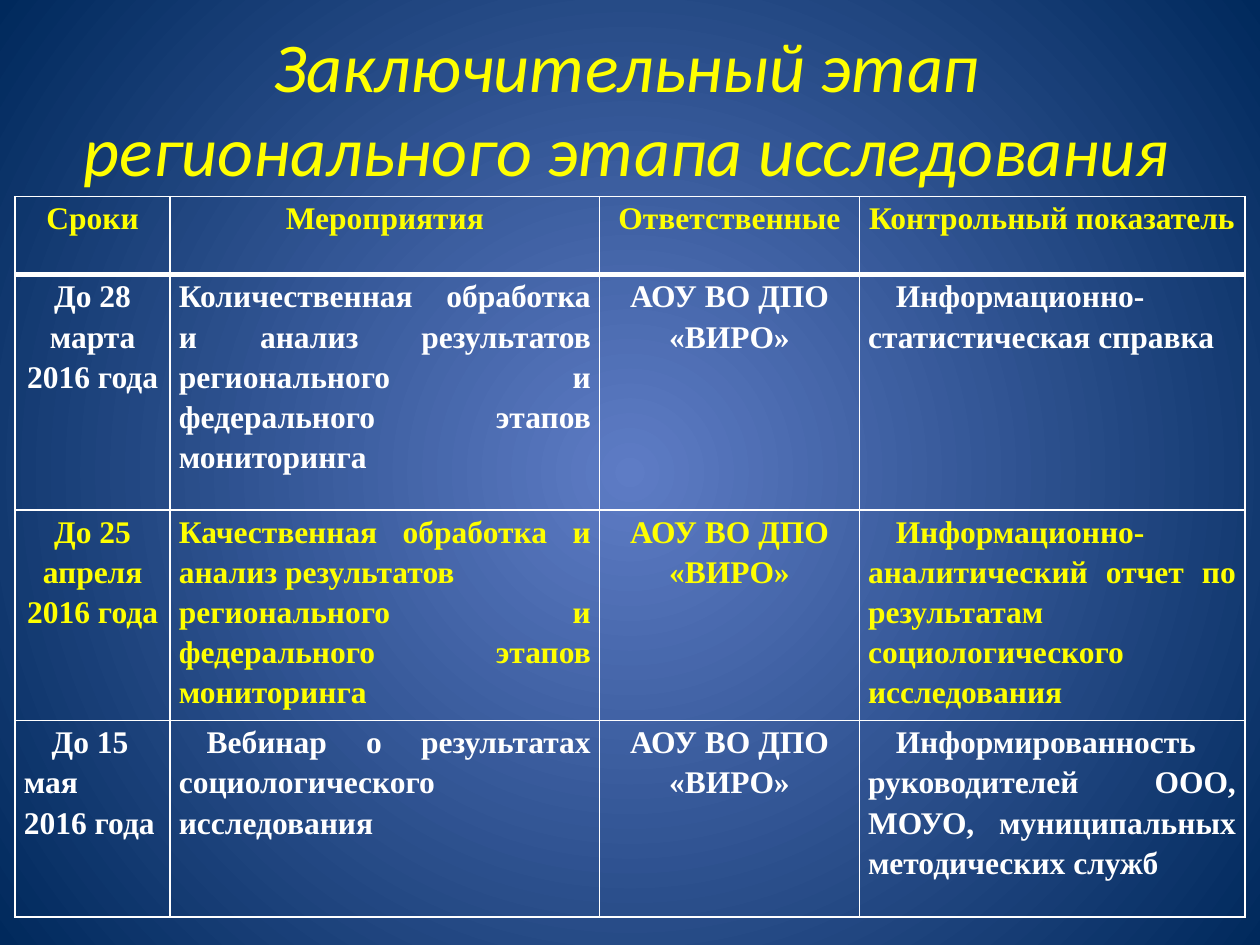
import pptx
import pptx.util
import pptx.dml.color
import pptx.enum.text
import pptx.oxml
import pptx.oxml.ns

Inches, Pt = pptx.util.Inches, pptx.util.Pt
Align = pptx.enum.text.PP_ALIGN
LEFT, MID, JUST = Align.LEFT, Align.CENTER, Align.JUSTIFY

theme = {
    "text": "FFFFFF", "accent": "FFFF00", "line": "FFFFFF",
    "glow": "5E7CC5", "edge": "00295C",
    "head font": "Calibri", "body font": "Times New Roman",
    "head size": 40, "body size": 18,
}


def write(frame, text, font, size, color, align=LEFT, indent=0, spacing=None,
          bold=False, italic=False):
    """Fill a frame; each line of text is a paragraph, and \\v breaks a line."""
    frame.word_wrap = True
    frame.text = text
    for para in frame.paragraphs:
        para.alignment = align
        para.line_spacing = spacing
        props = para._p.get_or_add_pPr()
        props.set("marL", "0")
        props.set("indent", str(Inches(indent)))
        for run in para.runs:
            run.font.name = font
            run.font.size = Pt(size)
            run.font.bold = bold
            run.font.italic = italic
            run.font.color.rgb = pptx.dml.color.RGBColor.from_string(color)


def edge(cell, widths):
    """Draw the borders of a cell; widths are points for left, right, top, bottom."""
    props = cell._tc.get_or_add_tcPr()
    for place, (side, width) in enumerate(zip("LRTB", widths)):
        props.insert(place, pptx.oxml.parse_xml(
            f'<a:ln{side} {pptx.oxml.ns.nsdecls("a")} w="{Pt(width)}">'
            f'<a:solidFill><a:srgbClr val="{theme["line"]}"/></a:solidFill>'
            f'</a:ln{side}>'))


deck = pptx.Presentation()
deck.slide_width, deck.slide_height = Inches(10), Inches(7.5)
slide = deck.slides.add_slide(deck.slide_layouts[6])

# Radial background
fill = slide.background.fill
fill.gradient()
for stop, name in zip(fill.gradient_stops, ("glow", "edge")):
    stop.color.rgb = pptx.dml.color.RGBColor.from_string(theme[name])
grad = slide._element.find(".//" + pptx.oxml.ns.qn("a:gradFill"))
line = grad.find(pptx.oxml.ns.qn("a:lin"))
grad.replace(line, pptx.oxml.parse_xml(
    f'<a:path {pptx.oxml.ns.nsdecls("a")} path="circle">'
    '<a:fillToRect l="50000" t="50000" r="50000" b="50000"/></a:path>'))

# Schedule: each cell holds its text, alignment and first-line indent
heads = ("Сроки", "Мероприятия", "Ответственные", "Контрольный показатель")
owner = ("АОУ ВО ДПО «ВИРО»", MID, 0)
rows = [
    [(head, MID, 0) for head in heads],
    [("До 28 марта 2016 года", MID, 0),
     ("Количественная обработка и анализ результатов регионального "
      "и федерального этапов мониторинга", JUST, 0),
     owner,
     ("Информационно-статистическая справка", JUST, 0.22)],
    [("До 25 апреля 2016 года", MID, 0),
     ("Качественная обработка и анализ результатов \n"
      "регионального и федерального этапов мониторинга", JUST, 0),
     owner,
     ("Информационно-аналитический отчет по результатам "
      "социологического исследования", JUST, 0.22)],
    [("До 15 мая \v2016 года", LEFT, 0.22),
     ("Вебинар о результатах социологического исследования", JUST, 0.22),
     owner,
     ("Информированность руководителей ООО, МОУО, муниципальных "
      "методических служб", JUST, 0.22)],
]
wide = (1.23, 3.41, 2.06, 3.06)
tall = (0.62, 1.87, 1.67, 1.56)
table = slide.shapes.add_table(
    len(tall), len(wide), Inches(0.12), Inches(1.56),
    Inches(sum(wide)), Inches(sum(tall))).table
for col, width in zip(table.columns, wide):
    col.width = Inches(width)
for row, height in zip(table.rows, tall):
    row.height = Inches(height)

for r, row in enumerate(rows):
    color = theme["text" if r % 2 else "accent"]
    for c, (text, align, indent) in enumerate(row):
        cell = table.cell(r, c)
        cell.margin_left = cell.margin_right = Inches(0.07)
        cell.margin_top = cell.margin_bottom = 0
        cell.fill.background()
        edge(cell, (1, 1, 3 if r == 1 else 1, 3 if r == 0 else 1))
        write(cell.text_frame, text, theme["body font"], theme["body size"],
              color, align=align, indent=indent, spacing=1.15, bold=True)

# Title
box = slide.shapes.add_textbox(Inches(0.43), Inches(0.13), Inches(9.21), Inches(1.45))
write(box.text_frame, "Заключительный этап \nрегионального этапа исследования ",
      theme["head font"], theme["head size"], theme["accent"],
      align=MID, italic=True)

deck.save("out.pptx")
